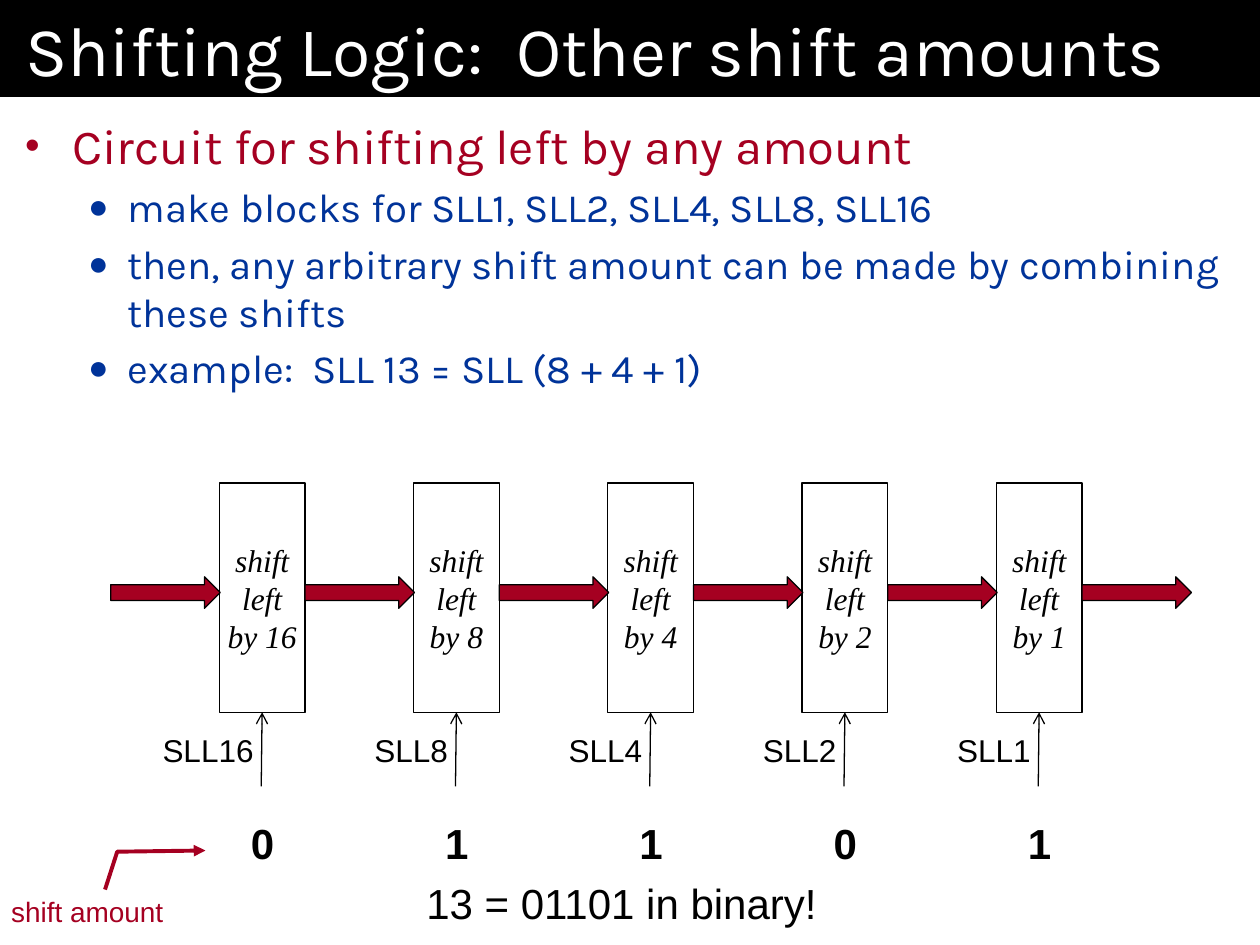
from lxml import etree
from pptx import Presentation
from pptx.dml.color import RGBColor
from pptx.enum.shapes import MSO_CONNECTOR, MSO_SHAPE
from pptx.enum.text import MSO_ANCHOR, PP_ALIGN
from pptx.oxml.ns import qn
from pptx.util import Pt

RECT, ARROW = MSO_SHAPE.RECTANGLE, MSO_SHAPE.RIGHT_ARROW
LINE = MSO_CONNECTOR.STRAIGHT
LEFT, MID, RIGHT = PP_ALIGN.LEFT, PP_ALIGN.CENTER, PP_ALIGN.RIGHT
TOP, CENTER = MSO_ANCHOR.TOP, MSO_ANCHOR.MIDDLE

BLACK, WHITE, RED, BLUE = "000000", "FFFFFF", "A50021", "003399"
START, STEP = 125.3, 111
BLOCK_TOP, BLOCK_W, BLOCK_H = 276, 49, 131
SHIFTS = [(16, "0"), (8, "1"), (4, "1"), (2, "0"), (1, "1")]
BODY = [
    (0, "Circuit for shifting left by any amount"),
    (1, "make blocks for SLL1, SLL2, SLL4, SLL8, SLL16"),
    (1, "then, any arbitrary shift amount can be made by combining "
        "these shifts"),
    (1, "example:  SLL 13 = SLL (8 + 4 + 1)"),
]
# size, colour, bullet, left margin, hanging indent
LEVELS = [(28, RED, "•", 27, 27), (23, BLUE, "●", 58.5, 22.5)]


def color(code):
    return RGBColor.from_string(code)


def write(para, text, size=18, font="Arial", ink=BLACK, bold=False,
          slant=False, align=LEFT):
    para.alignment = align
    run = para.add_run()
    run.text = text
    face = run.font
    face.size, face.name = Pt(size), font
    face.bold, face.italic = bold, slant
    face.color.rgb = color(ink)


def frame(shape, wrap=False, anchor=TOP, side=7.2, edge=3.6):
    """Set the wrap, anchor and insets of a shape's text."""
    box = shape.text_frame
    box.word_wrap, box.vertical_anchor = wrap, anchor
    box.margin_left = box.margin_right = Pt(side)
    box.margin_top = box.margin_bottom = Pt(edge)
    return box


def label(slide, text, x, y, w, h, **form):
    shape = slide.shapes.add_textbox(Pt(x), Pt(y), Pt(w), Pt(h))
    write(frame(shape).paragraphs[0], text, **form)


def block(slide, kind, x, y, w, h, fill=None, line=None):
    shape = slide.shapes.add_shape(kind, Pt(x), Pt(y), Pt(w), Pt(h))
    shape.shadow.inherit = False
    if fill:
        shape.fill.solid()
        shape.fill.fore_color.rgb = color(fill)
    else:
        shape.fill.background()
    if line:
        shape.line.color.rgb = color(line)
        shape.line.width = Pt(0.75)
    else:
        shape.line.fill.background()
    return shape


def tip(shape, kind):
    """Put an arrowhead at the end of a line."""
    line = shape.line._get_or_add_ln()
    etree.SubElement(line, qn("a:tailEnd"), type=kind)


def wire(slide, x, y, x2, y2):
    line = slide.shapes.add_connector(LINE, Pt(x), Pt(y), Pt(x2), Pt(y2))
    line.line.color.rgb = color(BLACK)
    line.line.width = Pt(0.75)
    tip(line, "arrow")
    etree.SubElement(line._element.spPr, qn("a:effectLst"))


def bullet(para, sign, ink, margin, hang):
    props = para._p.get_or_add_pPr()
    props.set("marL", str(Pt(margin)))
    props.set("indent", str(-Pt(hang)))
    tint = etree.SubElement(props, qn("a:buClr"))
    etree.SubElement(tint, qn("a:srgbClr"), val=ink)
    etree.SubElement(props, qn("a:buSzPct"), val="85000")
    etree.SubElement(props, qn("a:buFont"), typeface="Arial")
    etree.SubElement(props, qn("a:buChar"), char=sign)


def header(slide):
    bar = block(slide, RECT, 0, 0, 720, 55.4, fill=BLACK)
    box = frame(bar, wrap=True, side=14.4)
    write(box.paragraphs[0], "Shifting Logic:  Other shift amounts",
          size=40, font="Karla", ink=WHITE)


def body(slide):
    shape = slide.shapes.add_textbox(0, Pt(55.4), Pt(720), Pt(292.3))
    box = frame(shape, wrap=True, side=14.4, edge=10.8)
    for i, (level, text) in enumerate(BODY):
        size, ink, sign, margin, hang = LEVELS[level]
        para = box.add_paragraph() if i else box.paragraphs[0]
        para.level = level
        para.space_before = Pt(size * 0.2)
        write(para, text, size=size, font="Karla", ink=ink)
        bullet(para, sign, ink, margin, hang)


def stage(slide, x, count, bit):
    """Draw one shift block with its control wire, name and bit."""
    shape = block(slide, RECT, x, BLOCK_TOP, BLOCK_W, BLOCK_H, line=BLACK)
    box = frame(shape, anchor=CENTER)
    for i, text in enumerate(["shift", "left", f"by {count}"]):
        para = box.add_paragraph() if i else box.paragraphs[0]
        write(para, text, font="Times New Roman", slant=True, align=MID)
    mid, foot = x + BLOCK_W / 2, BLOCK_TOP + BLOCK_H
    wire(slide, mid - 0.5, foot + 42.4, mid, foot)
    name = f"SLL{count}"
    wide = 17 + 10 * len(name)
    label(slide, name, mid + 2.2 - wide, foot + 7, wide, 29, align=RIGHT)
    label(slide, bit, mid - 14, 463.7, 28, 36, size=24, bold=True,
          align=RIGHT)


def pointer(slide):
    label(slide, "shift amount", -0.7, 507.6, 102.2, 26.6, size=16, ink=RED)
    pen = slide.shapes.build_freeform(Pt(60), Pt(508.3))
    pen.add_line_segments([(Pt(67), Pt(486.7)), (Pt(117.4), Pt(486))],
                          close=False)
    shape = pen.convert_to_shape()
    shape.shadow.inherit = False
    shape.fill.background()
    shape.line.color.rgb = color(RED)
    shape.line.width = Pt(2.25)
    tip(shape, "triangle")


def main():
    deck = Presentation()
    deck.slide_width, deck.slide_height = Pt(720), Pt(540)
    slide = deck.slides.add_slide(deck.slide_layouts[6])
    header(slide)
    body(slide)
    for i, (count, bit) in enumerate(SHIFTS):
        stage(slide, START + i * STEP, count, bit)
    gap = STEP - BLOCK_W
    for i in range(len(SHIFTS) + 1):
        block(slide, ARROW, START - gap + i * STEP, 329.6, gap + 0.6, 18,
              fill=RED, line=BLACK)
    label(slide, "13 = 01101 in binary!", 234, 498.2, 239.8, 36, size=24,
          align=RIGHT)
    pointer(slide)
    deck.save("out.pptx")


if __name__ == "__main__":
    main()
